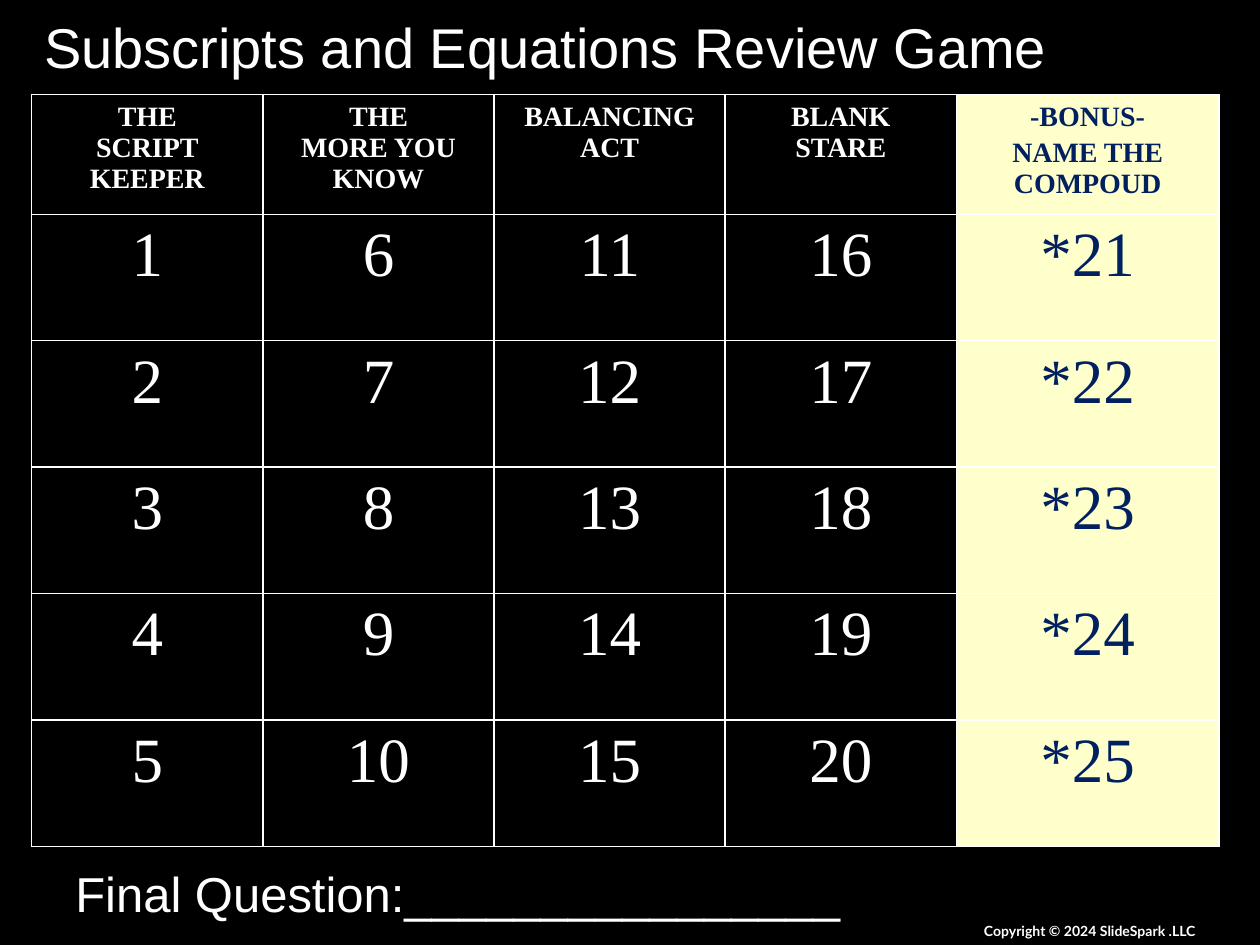
"""Build the review game board slide."""
from lxml.etree import SubElement
from pptx import Presentation
from pptx.dml.color import RGBColor as Color
from pptx.enum.text import PP_ALIGN as Align
from pptx.oxml.ns import qn
from pptx.util import Cm, Pt

COLORS = {"black": "000000", "white": "FFFFFF", "cream": "FFFFCC", "navy": "002060"}
HEADINGS = [
    ["THE\nSCRIPT\nKEEPER"],
    ["THE\nMORE YOU\nKNOW"],
    ["BALANCING\nACT"],
    ["BLANK\nSTARE"],
    ["-BONUS-", "NAME THE COMPOUD"],
]
QUESTIONS = 5


def paint(fill, color):
    fill.solid()
    fill.fore_color.rgb = Color.from_string(COLORS[color])


def write(para, text, font, size, color, bold=False):
    for index, line in enumerate(text.split("\n")):
        if index:
            para.add_line_break()
        span = para.add_run()
        span.text = line
        span.font.name = font
        span.font.size = Pt(size)
        span.font.bold = bold
        span.font.color.rgb = Color.from_string(COLORS[color])


def add_label(page, place, text, font, size, bold=False, align=Align.LEFT, top=0.13):
    box = page.shapes.add_textbox(*map(Cm, place))
    frame = box.text_frame
    frame.word_wrap = True
    frame.margin_top = Cm(top)
    frame.paragraphs[0].alignment = align
    write(frame.paragraphs[0], text, font, size, "white", bold)


def add_borders(cell):
    properties = cell._tc.get_or_add_tcPr()
    for side in ("a:lnL", "a:lnR", "a:lnT", "a:lnB"):
        line = SubElement(properties, qn(side), w=str(Pt(1)))
        solid = SubElement(line, qn("a:solidFill"))
        SubElement(solid, qn("a:srgbClr"), val=COLORS["white"])


def fill_cell(cell, texts, size, bold, bonus):
    add_borders(cell)
    if bonus:
        paint(cell.fill, "cream")
    else:
        cell.fill.background()
    frame = cell.text_frame
    for index, text in enumerate(texts):
        para = frame.add_paragraph() if index else frame.paragraphs[0]
        para.alignment = Align.CENTER
        if index:
            para.space_before = Pt(size * 0.2)
        write(para, text, "Times New Roman", size, "navy" if bonus else "white", bold)


def add_board(page):
    widths = [4.66] * 4 + [5.29]
    heights = [2.41] + [2.55] * QUESTIONS
    board = page.shapes.add_table(
        len(heights), len(widths), Cm(0.64), Cm(1.91), Cm(sum(widths)), Cm(sum(heights))
    ).table
    board.first_row = board.horz_banding = False
    for row, height in zip(board.rows, heights):
        row.height = Cm(height)
    for number, (width, heading) in enumerate(zip(widths, HEADINGS)):
        board.columns[number].width = Cm(width)
        bonus = number == len(HEADINGS) - 1
        fill_cell(board.cell(0, number), heading, 16, True, bonus)
        for row in range(1, QUESTIONS + 1):
            label = f"{'*' if bonus else ''}{number * QUESTIONS + row}"
            fill_cell(board.cell(row, number), [label], 36, False, bonus)


def main():
    deck = Presentation()
    deck.slide_width, deck.slide_height = Cm(25.4), Cm(19.05)
    page = deck.slides.add_slide(deck.slide_layouts[6])
    paint(page.background.fill, "black")
    add_board(page)
    add_label(page, (15.67, 18.47, 8.69, 0.58), "Copyright © 2024 SlideSpark .LLC",
              "Lato", 8, bold=True, align=Align.RIGHT)
    add_label(page, (0.64, 0, 24.76, 1.6), "Subscripts and Equations Review Game",
              "Arial", 32, top=0.25)
    add_label(page, (1.27, 17.15, 16.71, 1.45), "Final Question:" + "_" * 16,
              "Arial", 28, top=0.25)
    deck.save("out.pptx")


if __name__ == "__main__":
    main()
